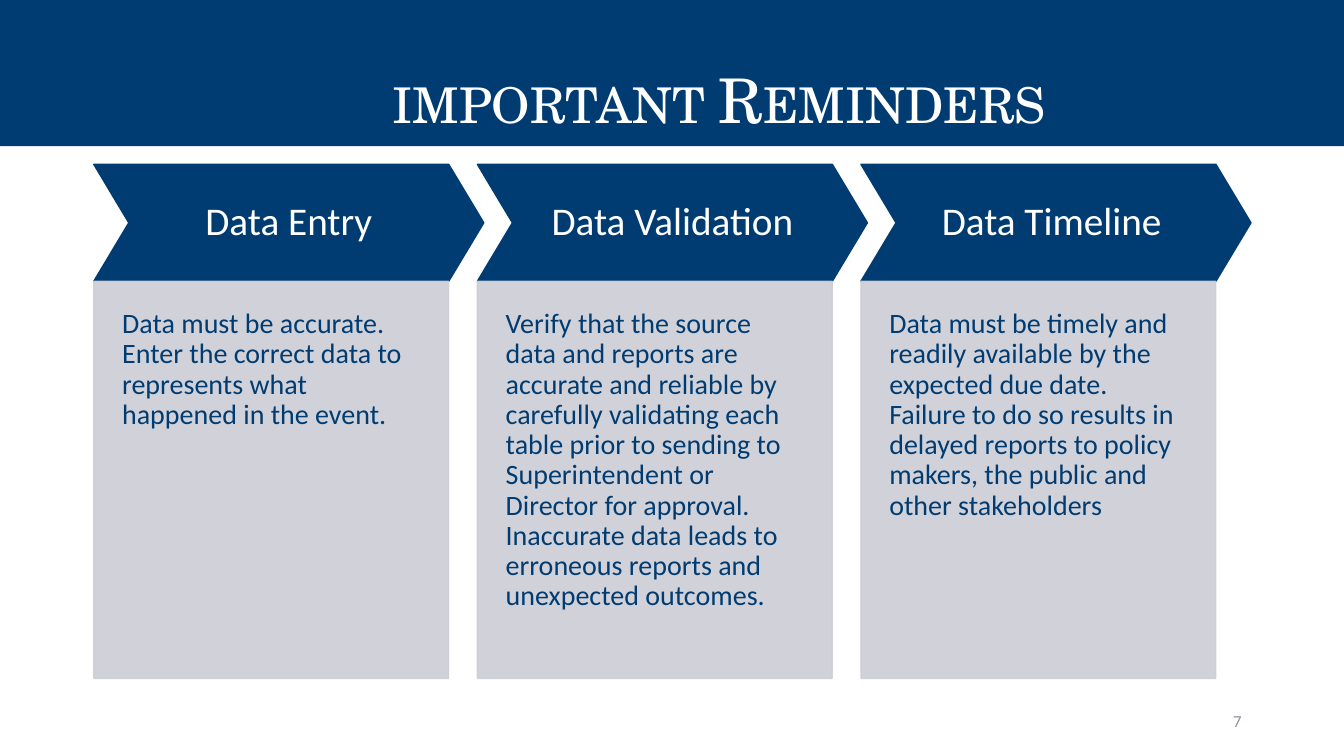
import dataclasses

import lxml.etree
import pptx
import pptx.dml.color
import pptx.enum.shapes
import pptx.enum.text
import pptx.oxml.ns
import pptx.util

Pt = pptx.util.Pt
RGB = pptx.dml.color.RGBColor
SHAPE = pptx.enum.shapes.MSO_SHAPE
ALIGN = pptx.enum.text.PP_ALIGN
ANCHOR = pptx.enum.text.MSO_ANCHOR


@dataclasses.dataclass(frozen=True)
class Theme:
    navy: RGB = RGB.from_string("003C71")
    panel: RGB = RGB.from_string("CCCED5")
    white: RGB = RGB.from_string("FFFFFF")
    muted: RGB = RGB.from_string("8C92A5")
    title_font: str = "TeX Gyre Schola"
    body_font: str = "Calibri"
    title_size: int = 44
    heading_size: int = 28
    body_size: int = 20
    number_size: int = 12


THEME = Theme()

REMINDERS = [
    ("Data Entry",
     "Data must be accurate. Enter the correct data to represents what "
     "happened in the event."),
    ("Data Validation",
     "Verify that the source data and reports are accurate and reliable by "
     "carefully validating each table prior to sending to Superintendent or "
     "Director for approval. Inaccurate data leads to erroneous reports and "
     "unexpected outcomes."),
    ("Data Timeline ",
     "Data must be timely and readily available by the expected due date. "
     "Failure to do so results in delayed reports to policy makers, the "
     "public and other stakeholders"),
]

# Column layout, in points
LEFT, TOP, PITCH = 67, 117.4, 274
CHEVRON_W, CHEVRON_H = 278.6, 83.5
PANEL_W, PANEL_H = 253.4, 283.7


def set_alpha(fill_parent, percent):
    """Make the solid colour inside an element partly transparent."""
    color = fill_parent.find(".//" + pptx.oxml.ns.qn("a:srgbClr"))
    alpha = lxml.etree.SubElement(color, pptx.oxml.ns.qn("a:alpha"))
    alpha.set("val", str(percent * 1000))


def add_block(s, kind, box, color, line=True):
    sp = s.shapes.add_shape(kind, *map(Pt, box))
    sp.shadow.inherit = False
    sp.fill.solid()
    sp.fill.fore_color.rgb = color
    if line:
        sp.line.color.rgb = color
        sp.line.width = Pt(1)
    else:
        sp.line.fill.background()
    return sp


def write(sp, text, size, color, align, anchor, insets,
          font=THEME.body_font, spacing=0.9):
    tf = sp.text_frame
    tf.word_wrap = True
    tf.vertical_anchor = anchor
    tf.margin_left, tf.margin_top, tf.margin_right, tf.margin_bottom = map(Pt, insets)
    p = tf.paragraphs[0]
    p.text = text
    p.alignment = align
    p.line_spacing = spacing
    r = p.runs[0]
    r.font.name = font
    r.font.size = Pt(size)
    r.font.color.rgb = color
    return r


def add_banner(s, text):
    sp = add_block(s, SHAPE.RECTANGLE, (0, 0, 960, 104.4), THEME.navy, line=False)
    r = write(sp, text, THEME.title_size, THEME.white, ALIGN.CENTER, ANCHOR.TOP,
              (64.8, 50.4, 7.2, 3.6), font=THEME.title_font)
    sp.text_frame.paragraphs[0].space_before = Pt(10)
    r.font._element.set("cap", "small")


def add_reminder(s, left, heading, body):
    # Arrow heading
    sp = add_block(s, SHAPE.CHEVRON, (left, TOP, CHEVRON_W, CHEVRON_H), THEME.navy)
    sp.adjustments[0] = 0.3
    write(sp, heading, THEME.heading_size, THEME.white,
          ALIGN.CENTER, ANCHOR.MIDDLE, (10, 10, 10, 10))

    # Panel below it
    sp = add_block(s, SHAPE.RECTANGLE,
                   (left, TOP + CHEVRON_H, PANEL_W, PANEL_H), THEME.panel)
    set_alpha(sp.fill._xPr.find(pptx.oxml.ns.qn("a:solidFill")), 90)
    set_alpha(sp.line._ln, 90)
    write(sp, body, THEME.body_size, THEME.navy,
          ALIGN.LEFT, ANCHOR.TOP, (20.2, 20.2, 20.2, 40.3))


def add_slide_number(s, number):
    sp = s.shapes.add_textbox(Pt(678), Pt(500.4), Pt(216), Pt(28.8))
    write(sp, number, THEME.number_size, THEME.muted, ALIGN.RIGHT, ANCHOR.MIDDLE,
          (7.2, 3.6, 7.2, 3.6), spacing=1.0)


def main():
    prs = pptx.Presentation()
    prs.slide_width, prs.slide_height = Pt(960), Pt(540)
    s = prs.slides.add_slide(prs.slide_layouts[6])

    add_slide_number(s, "7")
    for i, (heading, body) in enumerate(REMINDERS):
        add_reminder(s, LEFT + i * PITCH, heading, body)
    add_banner(s, " important Reminders")

    prs.save("out.pptx")


if __name__ == "__main__":
    main()
